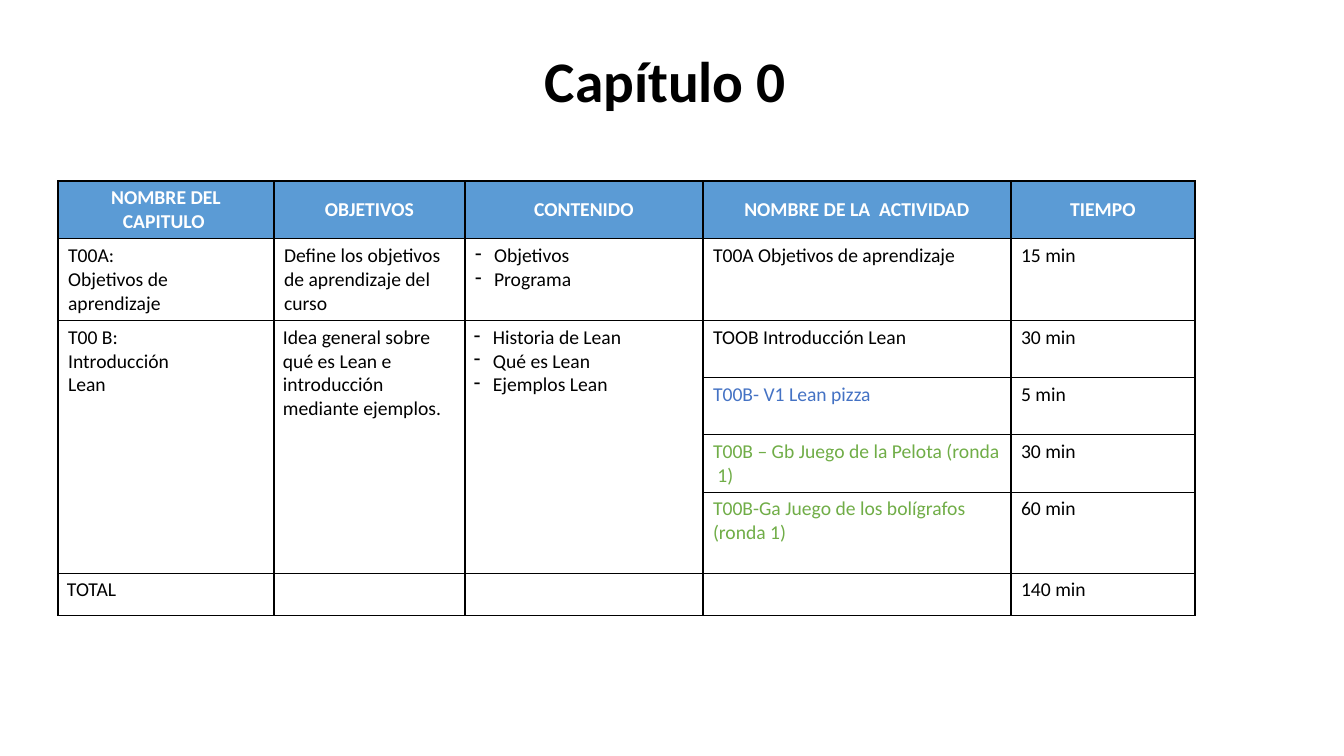
"""Build the slide that outlines the activities and times of chapter 0."""
import lxml.etree
import pptx
import pptx.dml.color
import pptx.enum.text
import pptx.oxml
import pptx.oxml.ns
import pptx.util

EMU_PER_PX = 914400 / 100.8
THEME = {
    "font": "Calibri", "title_size": 41, "table_size": 14, "border_pt": 1,
    "black": "000000", "white": "FFFFFF", "header": "5B9BD5",
    "video": "4472C4", "game": "70AD47",
}
BULLET_INDENT = 19
COLUMN_WIDTHS = [216, 191, 238, 308, 184]
ROW_HEIGHTS = [57, 81, 57, 57, 57, 81, 42]
BULLET_COLUMN, ACTIVITY_COLUMN = 2, 3
ACTIVITY_COLORS = {3: "video", 4: "game", 5: "game"}
TIGHT_CELLS = [(2, 1), (2, 2), (6, 0)]
TOPIC_FIRST_ROW, TOPIC_LAST_ROW = 2, 5

schedule = [
    ["NOMBRE DEL CAPITULO ", "OBJETIVOS", "CONTENIDO", "NOMBRE DE LA  ACTIVIDAD", "TIEMPO"],
    ["T00A: \vObjetivos de aprendizaje", "Define los objetivos de aprendizaje del curso",
     "Objetivos\nPrograma", "T00A Objetivos de aprendizaje", "15 min"],
    ["T00 B:\vIntroducción\nLean",
     "Idea general sobre qué es Lean e introducción mediante ejemplos.",
     "Historia de Lean\nQué es Lean\nEjemplos Lean", "TOOB Introducción Lean", "30 min"],
    ["", "", "", "T00B- V1 Lean pizza", "5 min"],
    ["", "", "", "T00B – Gb Juego de la Pelota (ronda  1)", "30 min"],
    ["", "", "", "T00B-Ga Juego de los bolígrafos (ronda 1)", "60 min"],
    ["TOTAL", "", "", "", "140 min"],
]


def px(length):
    return pptx.util.Emu(round(length * EMU_PER_PX))


def style_runs(paragraph, size, color, bold):
    for run in paragraph.runs:
        run.font.name = THEME["font"]
        run.font.size = pptx.util.Pt(THEME[size])
        run.font.bold = bold
        run.font.color.rgb = pptx.dml.color.RGBColor.from_string(THEME[color])


deck = pptx.Presentation()
deck.slide_width, deck.slide_height = px(1344), px(756)
slide = deck.slides.add_slide(deck.slide_layouts[6])

chapter_schedule = slide.shapes.add_table(
    len(ROW_HEIGHTS), len(COLUMN_WIDTHS), px(58), px(181),
    px(sum(COLUMN_WIDTHS)), px(sum(ROW_HEIGHTS))).table
chapter_schedule.first_row = False
chapter_schedule.horz_banding = False
for column, width in zip(chapter_schedule.columns, COLUMN_WIDTHS):
    column.width = px(width)
for row, height in zip(chapter_schedule.rows, ROW_HEIGHTS):
    row.height = px(height)

for row_index, entries in enumerate(schedule):
    is_header = row_index == 0
    for column_index, entry in enumerate(entries):
        cell = chapter_schedule.cell(row_index, column_index)
        cell_properties = cell._tc.get_or_add_tcPr()
        for side in ("L", "R", "T", "B"):
            cell_properties.append(pptx.oxml.parse_xml(
                f'<a:ln{side} {pptx.oxml.ns.nsdecls("a")} w="{pptx.util.Pt(THEME["border_pt"])}">'
                f'<a:solidFill><a:srgbClr val="{THEME["black"]}"/></a:solidFill></a:ln{side}>'))
        cell.fill.solid()
        cell.fill.fore_color.rgb = pptx.dml.color.RGBColor.from_string(
            THEME["header" if is_header else "white"])
        if is_header:
            cell.vertical_anchor = pptx.enum.text.MSO_ANCHOR.MIDDLE
        if (row_index, column_index) in TIGHT_CELLS:
            cell.margin_left = cell.margin_right = px(9)

        color = "white" if is_header else "black"
        if column_index == ACTIVITY_COLUMN:
            color = ACTIVITY_COLORS.get(row_index, color)
        cell.text_frame.text = entry
        for paragraph in cell.text_frame.paragraphs:
            if is_header:
                paragraph.alignment = pptx.enum.text.PP_ALIGN.CENTER
            elif column_index == BULLET_COLUMN and entry:
                paragraph_properties = paragraph._p.get_or_add_pPr()
                paragraph_properties.set("marL", str(px(BULLET_INDENT)))
                paragraph_properties.set("indent", str(-px(BULLET_INDENT)))
                bullet = lxml.etree.SubElement(
                    paragraph_properties, pptx.oxml.ns.qn("a:buChar"))
                bullet.set("char", "-")
            style_runs(paragraph, "table_size", color, is_header)

for column_index in range(ACTIVITY_COLUMN):
    chapter_schedule.cell(TOPIC_FIRST_ROW, column_index).merge(
        chapter_schedule.cell(TOPIC_LAST_ROW, column_index))

chapter_title = slide.shapes.add_textbox(px(0), px(48), px(1344), px(132)).text_frame
chapter_title.word_wrap = True
chapter_title.text = "Capítulo 0 "
heading = chapter_title.paragraphs[0]
heading.alignment = pptx.enum.text.PP_ALIGN.CENTER
heading.line_spacing = 0.9
style_runs(heading, "title_size", "black", True)

deck.save("out.pptx")
